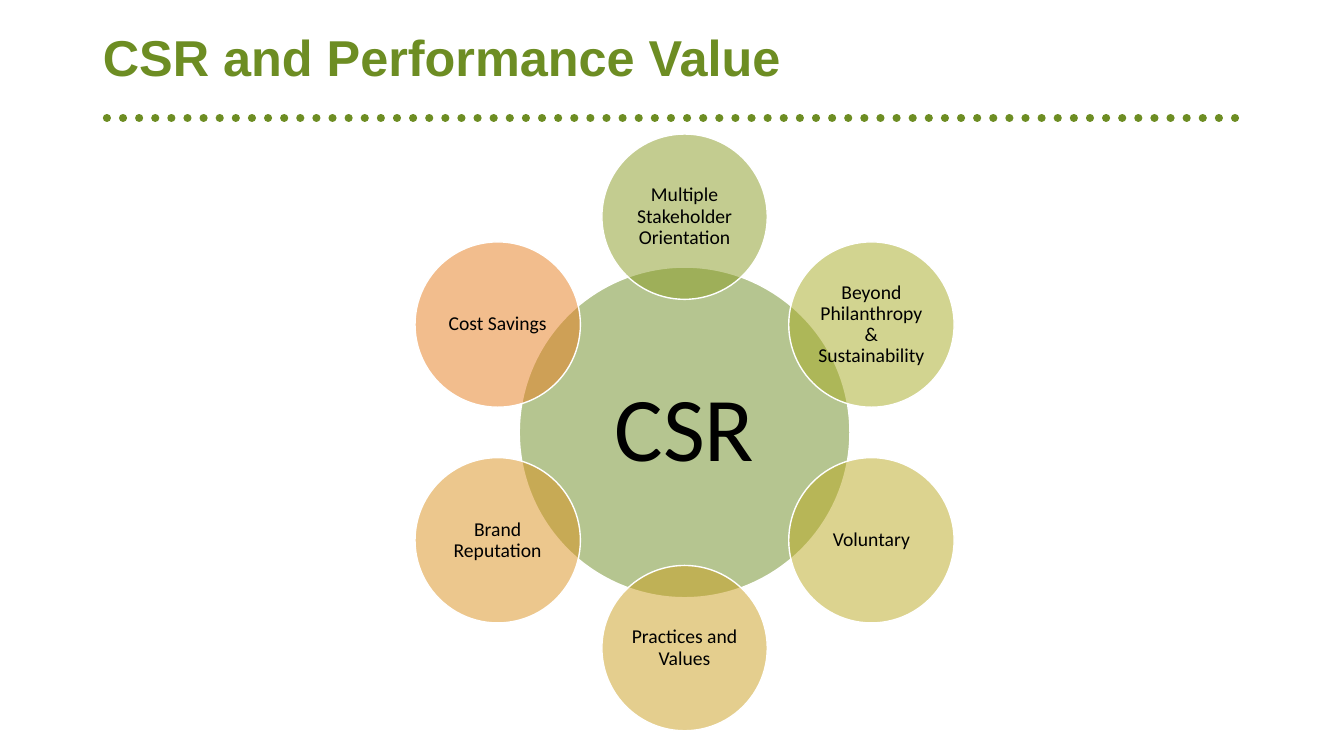
from math import cos, radians, sin

from pptx import Presentation
from pptx.dml.color import RGBColor
from pptx.enum.dml import MSO_LINE
from pptx.enum.shapes import MSO_CONNECTOR, MSO_SHAPE
from pptx.enum.text import MSO_ANCHOR, PP_ALIGN
from pptx.oxml.ns import qn
from pptx.util import Inches, Pt
from lxml.etree import SubElement

GREEN = "6D8D23"
CENTER_X, CENTER_Y = 6.79, 4.29
ORBIT = 2.14
HUB_SIZE, PETAL_SIZE = 3.28, 1.64


def rgb(value):
    return RGBColor.from_string(value)


def add_circle(x, y, size, color, label, points, inset):
    """Draw a half-transparent labelled circle centred on x, y."""
    circle = slide.shapes.add_shape(
        MSO_SHAPE.OVAL, Inches(x - size / 2), Inches(y - size / 2),
        Inches(size), Inches(size))
    circle.shadow.inherit = False
    circle.fill.solid()
    circle.fill.fore_color.rgb = rgb(color)
    solid = circle._element.spPr.find(qn("a:solidFill"))
    SubElement(solid[0], qn("a:alpha"), val="50000")
    circle.line.color.rgb = rgb("FFFFFF")
    circle.line.width = Pt(1)

    frame = circle.text_frame
    frame.word_wrap = True
    frame.vertical_anchor = MSO_ANCHOR.MIDDLE
    for side in ("left", "top", "right", "bottom"):
        setattr(frame, f"margin_{side}", Inches(inset))
    paragraph = frame.paragraphs[0]
    paragraph.alignment = PP_ALIGN.CENTER
    paragraph.line_spacing = 0.9
    run = paragraph.add_run()
    run.text = label
    run.font.name = "Calibri"
    run.font.size = Pt(points)
    run.font.color.rgb = rgb("000000")


prs = Presentation()
prs.slide_width, prs.slide_height = Inches(13.33), Inches(7.5)
slide = prs.slides.add_slide(prs.slide_layouts[5])

# Title
title = slide.shapes.title
title_box = {"left": 0.92, "top": 0.25, "width": 11.5, "height": 0.69}
for edge, inches in title_box.items():
    setattr(title, edge, Inches(inches))
title.text_frame.text = "CSR and Performance Value"
title.text_frame.vertical_anchor = MSO_ANCHOR.MIDDLE
heading = title.text_frame.paragraphs[0]
heading.alignment = PP_ALIGN.LEFT
heading.line_spacing = 0.9
heading_font = heading.runs[0].font
for attribute, value in {"name": "Arial", "size": Pt(36), "bold": True}.items():
    setattr(heading_font, attribute, value)
heading_font.color.rgb = rgb(GREEN)

# Dotted rule under the title
rule = slide.shapes.add_connector(
    MSO_CONNECTOR.STRAIGHT, Inches(1.06), Inches(1.17), Inches(12.36), Inches(1.17))
rule.line.color.rgb = rgb(GREEN)
rule.line.width = Pt(5.75)
rule.line.dash_style = MSO_LINE.ROUND_DOT
rule_properties = rule._element.spPr
rule_properties.find(qn("a:ln")).set("cap", "rnd")
SubElement(rule_properties, qn("a:effectLst"))

# Hub with its petals, clockwise from the top
add_circle(CENTER_X, CENTER_Y, HUB_SIZE, GREEN, "CSR", 65, 0.09)
petals = [
    ("Multiple Stakeholder Orientation", "889B23"),
    ("Beyond Philanthropy & Sustainability", "A7AA22"),
    ("Voluntary", "BAA820"),
    ("Practices and Values", "CA9E1E"),
    ("Brand Reputation", "DA901C"),
    ("Cost Savings", "E77C1D"),
]
for position, (label, color) in enumerate(petals):
    angle = radians(position * 360 / len(petals))
    add_circle(CENTER_X + ORBIT * sin(angle), CENTER_Y - ORBIT * cos(angle),
               PETAL_SIZE, color, label, 14, 0.02)

prs.save("out.pptx")
